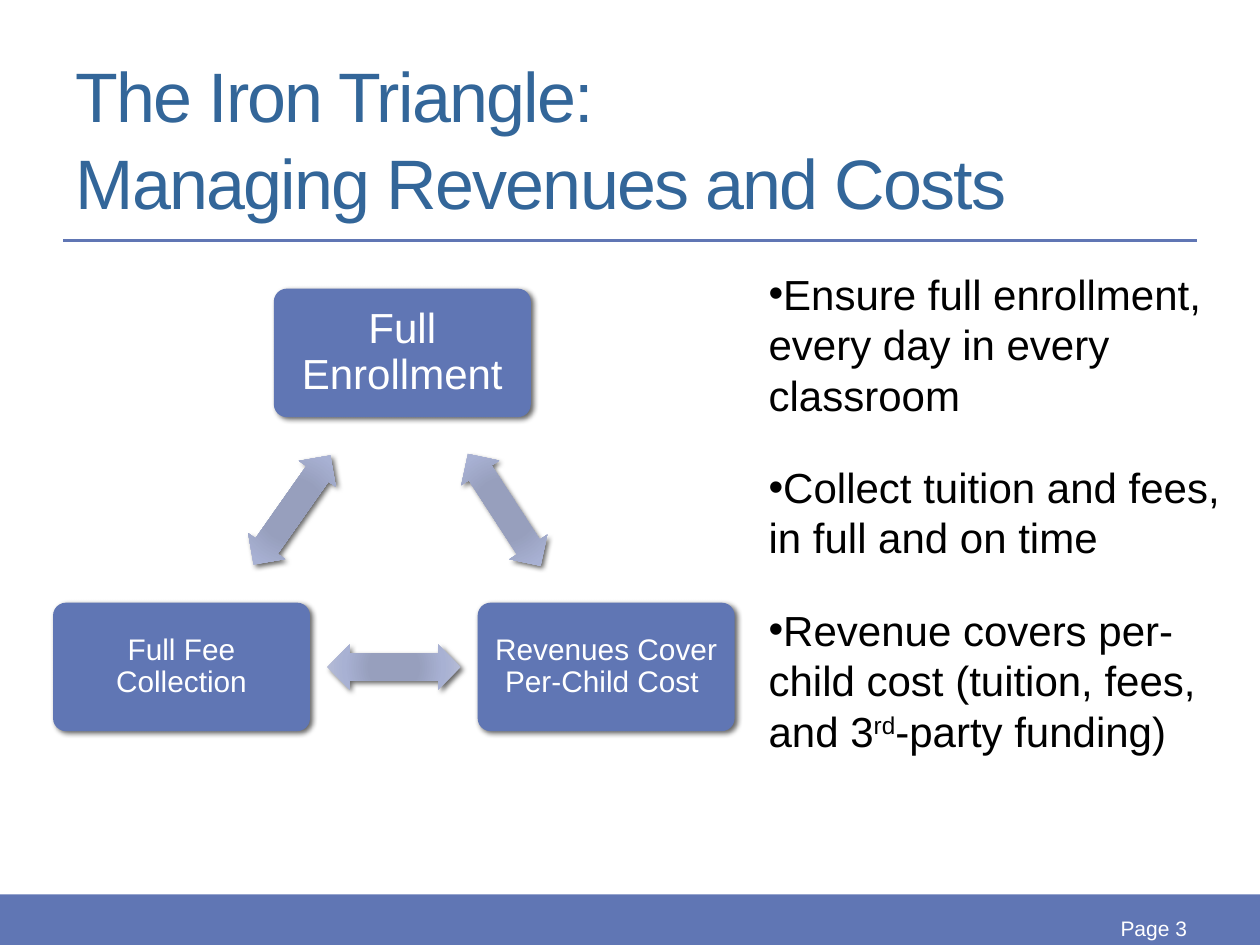
from dataclasses import dataclass
from itertools import combinations
from math import atan2, degrees

from lxml.etree import SubElement
from pptx import Presentation
from pptx.dml.color import RGBColor
from pptx.enum.shapes import MSO_CONNECTOR, MSO_SHAPE
from pptx.enum.text import MSO_ANCHOR, MSO_AUTO_SIZE, PP_ALIGN
from pptx.oxml.ns import qn
from pptx.util import Cm, Pt


@dataclass(frozen=True)
class Theme:
    """Colours, font and type sizes of the slide."""
    font: str = "Arial"
    accent: str = "6076B4"
    title: str = "336699"
    text: str = "000000"
    light: str = "FFFFFF"
    arrow: tuple = ((0, "969EBE"), (34, "979FBD"), (70, "A8B1D3"), (100, "B7BDD6"))
    title_pt: float = 40
    body_pt: float = 24
    node_pt: float = 17
    page_pt: float = 12


@dataclass(frozen=True)
class Box:
    """A region in centimetres."""
    x: float
    y: float
    w: float
    h: float

    def lengths(self):
        """Return the region as python-pptx lengths."""
        return Cm(self.x), Cm(self.y), Cm(self.w), Cm(self.h)


THEME = Theme()
NODES = [
    ("Full Enrollment", 0.52, 0, THEME.body_pt, 0.25),
    ("Revenues Cover Per-Child Cost ", 1, 1, THEME.node_pt, 0.17),
    ("Full Fee Collection", 0, 1, THEME.node_pt, 0.17),
]
POINTS = [
    ["Ensure full enrollment, every day in every classroom"],
    ["Collect tuition and fees, in full and on time"],
    ["Revenue covers per-child cost (tuition, fees, and 3", "rd", "-party funding)"],
]


def style(p, size, color):
    """Format every run of a paragraph."""
    for r in p.runs:
        r.font.name = THEME.font
        r.font.size = Pt(size)
        r.font.color.rgb = RGBColor.from_string(color)


def add_block(s, kind, box, color):
    """Add a filled shape without outline or shadow."""
    sp = s.shapes.add_shape(kind, *box.lengths())
    sp.fill.solid()
    sp.fill.fore_color.rgb = RGBColor.from_string(color)
    sp.line.fill.background()
    sp.shadow.inherit = False
    return sp


def add_shadow(sp):
    """Give a shape a soft shadow to the lower right."""
    effects = sp.element.spPr.find(qn("a:effectLst"))
    shadow = SubElement(effects, qn("a:outerShdw"), blurRad=str(Pt(3)),
                        dist=str(Pt(2)), dir="2700000", rotWithShape="0")
    color = SubElement(shadow, qn("a:srgbClr"), val="000000")
    SubElement(color, qn("a:alpha"), val="60000")


def add_radial_fill(sp):
    """Replace the solid fill of a shape by the arrow gradient."""
    spPr = sp.element.spPr
    solid = spPr.find(qn("a:solidFill"))
    grad = SubElement(spPr, qn("a:gradFill"), rotWithShape="1")
    stops = SubElement(grad, qn("a:gsLst"))
    for pos, color in THEME.arrow:
        stop = SubElement(stops, qn("a:gs"), pos=str(pos * 1000))
        SubElement(stop, qn("a:srgbClr"), val=color)
    circle = SubElement(grad, qn("a:path"), path="circle")
    SubElement(circle, qn("a:fillToRect"), dict.fromkeys("ltrb", "100000"))
    spPr.replace(solid, grad)


def add_title(s, box):
    """Place the title and the rule below it."""
    sp = s.shapes.title
    sp.left, sp.top, sp.width, sp.height = box.lengths()
    tf = sp.text_frame
    tf.auto_size = MSO_AUTO_SIZE.NONE
    tf.vertical_anchor = MSO_ANCHOR.MIDDLE
    p = tf.paragraphs[0]
    p.text = "The Iron Triangle:\vManaging Revenues and Costs"
    p.alignment = PP_ALIGN.LEFT
    p.line_spacing = 1.04
    style(p, THEME.title_pt, THEME.title)
    for r in p.runs:
        r.font._element.set("spc", "-100")
    y = Cm(box.y + box.h + 0.61)
    rule = s.shapes.add_connector(MSO_CONNECTOR.STRAIGHT, Cm(box.x), y, Cm(box.x + box.w), y)
    rule.line.color.rgb = RGBColor.from_string(THEME.accent)
    rule.line.width = Pt(2.08)
    SubElement(rule._element.spPr, qn("a:effectLst"))


def add_triangle(s, box):
    """Place three nodes in a triangle with an arrow midway between each pair."""
    w, h = 5.18, 2.59
    centers = []
    for text, fx, fy, size, inset in NODES:
        x, y = box.x + fx * (box.w - w), box.y + fy * (box.h - h)
        centers.append((x + w / 2, y + h / 2))
        sp = add_block(s, MSO_SHAPE.ROUNDED_RECTANGLE, Box(x, y, w, h), THEME.accent)
        sp.adjustments[0] = 0.1
        add_shadow(sp)
        tf = sp.text_frame
        tf.word_wrap = True
        tf.vertical_anchor = MSO_ANCHOR.MIDDLE
        tf.margin_left = tf.margin_right = tf.margin_top = tf.margin_bottom = Cm(inset)
        p = tf.paragraphs[0]
        p.text = text
        p.alignment = PP_ALIGN.CENTER
        p.line_spacing = 0.9
        style(p, size, THEME.light)
    aw, ah = 2.69, 0.91
    for (x1, y1), (x2, y2) in combinations(centers, 2):
        place = Box((x1 + x2 - aw) / 2, (y1 + y2 - ah) / 2, aw, ah)
        sp = add_block(s, MSO_SHAPE.LEFT_RIGHT_ARROW, place, THEME.accent)
        sp.adjustments[0], sp.adjustments[1] = 0.6, 0.5
        sp.rotation = degrees(atan2(y2 - y1, x2 - x1))
        add_radial_fill(sp)
        add_shadow(sp)


def add_points(s, box):
    """Place the bullet list in the body placeholder."""
    sp = s.placeholders[1]
    sp.left, sp.top, sp.width, sp.height = box.lengths()
    tf = sp.text_frame
    tf.auto_size = MSO_AUTO_SIZE.SHAPE_TO_FIT_TEXT
    for i, parts in enumerate(POINTS):
        p = tf.add_paragraph() if i else tf.paragraphs[0]
        pPr = p._p.get_or_add_pPr()
        pPr.set("marL", "0")
        pPr.set("indent", "0")
        SubElement(pPr, qn("a:buChar"), char="•")
        p.space_before, p.space_after = Pt(0), Pt(24)
        for part in parts:
            p.add_run().text = part
        style(p, THEME.body_pt, THEME.text)
        for r in p.runs[1:2]:
            r.font._element.set("baseline", "30000")


def add_footer(s, box):
    """Place the bottom band with the page number."""
    add_block(s, MSO_SHAPE.RECTANGLE, box, THEME.accent)
    page = Box(box.x + box.w - 4.19, box.y + 0.23, 2.97, 0.91)
    tf = s.shapes.add_textbox(*page.lengths()).text_frame
    tf.word_wrap = True
    tf.vertical_anchor = MSO_ANCHOR.MIDDLE
    p = tf.paragraphs[0]
    p.text = "Page 3"
    p.alignment = PP_ALIGN.RIGHT
    style(p, THEME.page_pt, THEME.light)


def main():
    """Build and save the slide."""
    prs = Presentation()
    prs.slide_width, prs.slide_height = Cm(25.4), Cm(19.05)
    s = prs.slides.add_slide(prs.slide_layouts[1])
    add_footer(s, Box(0, 18.03, 25.4, 1.02))
    add_title(s, Box(1.27, 1.27, 22.86, 2.97))
    add_triangle(s, Box(1.07, 5.82, 13.74, 8.92))
    add_points(s, Box(15.24, 5.28, 10.16, 10.19))
    prs.save("out.pptx")


if __name__ == "__main__":
    main()
